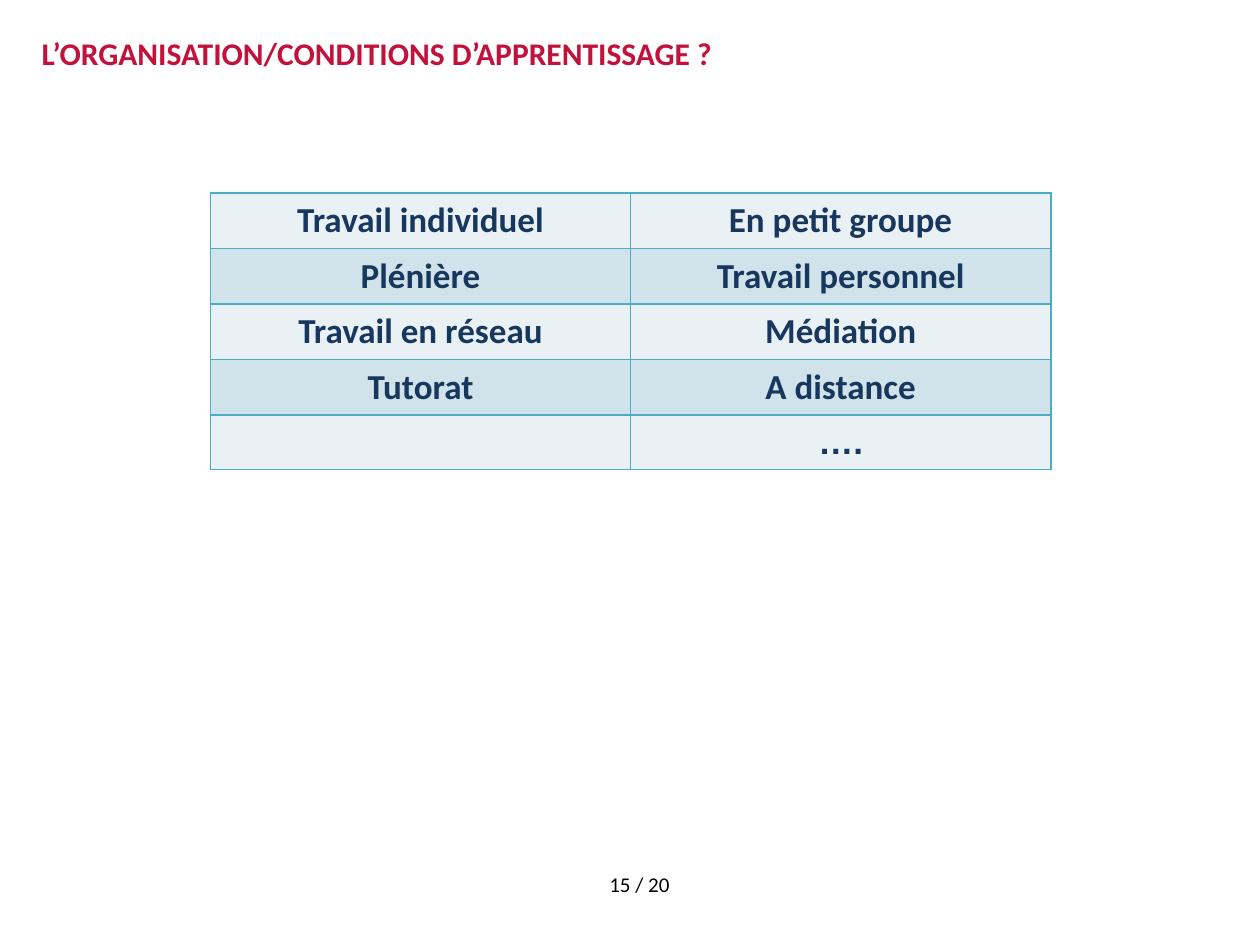
from lxml.etree import SubElement
from pptx import Presentation
from pptx.dml.color import RGBColor
from pptx.enum.shapes import MSO_SHAPE
from pptx.enum.text import MSO_ANCHOR, PP_ALIGN
from pptx.oxml.ns import qn
from pptx.util import Inches, Pt

TITLE = "L’ORGANISATION/CONDITIONS D’APPRENTISSAGE ?"
WORK_MODES = [
    ("Travail individuel", "En petit groupe"),
    ("Plénière", "Travail personnel"),
    ("Travail en réseau", "Médiation"),
    ("Tutorat", "A distance"),
    ("", "…."),
]
PAGE_NUMBER = "15 / 20"

THEME = {
    "title": {"name": "Calibri", "size": Pt(18), "bold": True, "color": "C2113A"},
    "mode": {"name": "Calibri", "size": Pt(20), "bold": True, "color": "17375E"},
    "ellipsis": {"name": "Arial", "size": Pt(20), "bold": True, "color": "17375E"},
    "page": {"name": "Calibri", "size": Pt(12), "bold": False, "color": "000000"},
    "bands": ("E9F1F5", "D0E3EA"),
    "border": "4BACC6",
    "background": "FFFFFF",
}


def write(frame, text, style, **layout):
    paragraph = frame.paragraphs[0]
    for attribute, value in layout.items():
        setattr(paragraph, attribute, value)
    run = paragraph.add_run()
    run.text = text
    for attribute, value in THEME[style].items():
        if attribute == "color":
            run.font.color.rgb = RGBColor.from_string(value)
        else:
            setattr(run.font, attribute, value)


def paint(fill, color):
    fill.solid()
    fill.fore_color.rgb = RGBColor.from_string(color)


def add_borders(cell):
    properties = cell._tc.get_or_add_tcPr()
    for side in ("a:lnL", "a:lnR", "a:lnT", "a:lnB"):
        line = SubElement(properties, qn(side), w=str(Pt(1)))
        solid = SubElement(line, qn("a:solidFill"))
        SubElement(solid, qn("a:srgbClr"), val=THEME["border"])


def add_title(slide):
    title = slide.shapes.add_shape(
        MSO_SHAPE.RECTANGLE, Inches(0.33), Inches(0.29), Inches(9.33), Inches(0.76)
    )
    title.shadow.inherit = False
    title.line.fill.background()
    paint(title.fill, THEME["background"])
    frame_format = {
        "margin_left": 0, "margin_right": 0, "margin_top": 0, "margin_bottom": 0,
        "vertical_anchor": MSO_ANCHOR.TOP, "word_wrap": True,
    }
    for attribute, value in frame_format.items():
        setattr(title.text_frame, attribute, value)
    write(title.text_frame, TITLE, "title", alignment=PP_ALIGN.JUSTIFY,
          line_spacing=Pt(20), space_after=Pt(12))


def add_work_modes(slide):
    modes = slide.shapes.add_table(
        len(WORK_MODES), len(WORK_MODES[0]),
        Inches(1.67), Inches(1.53), Inches(6.67), Inches(2.17),
    ).table
    for row, labels in enumerate(WORK_MODES):
        for column, label in enumerate(labels):
            cell = modes.cell(row, column)
            add_borders(cell)
            paint(cell.fill, THEME["bands"][row % 2])
            cell.vertical_anchor = MSO_ANCHOR.MIDDLE
            if label:
                style = "ellipsis" if label == "…." else "mode"
                write(cell.text_frame, label, style, alignment=PP_ALIGN.CENTER)


def add_page_number(slide):
    page = slide.shapes.add_textbox(Inches(4.38), Inches(6.87), Inches(1.39), Inches(0.31))
    page.text_frame.word_wrap = True
    write(page.text_frame, PAGE_NUMBER, "page", alignment=PP_ALIGN.CENTER)


def main():
    """Build the slide on learning organisation and conditions."""
    deck = Presentation()
    deck.slide_width, deck.slide_height = Inches(10), Inches(7.5)
    slide = deck.slides.add_slide(deck.slide_layouts[6])
    paint(slide.background.fill, THEME["background"])
    add_title(slide)
    add_work_modes(slide)
    add_page_number(slide)
    deck.save("out.pptx")


if __name__ == "__main__":
    main()
